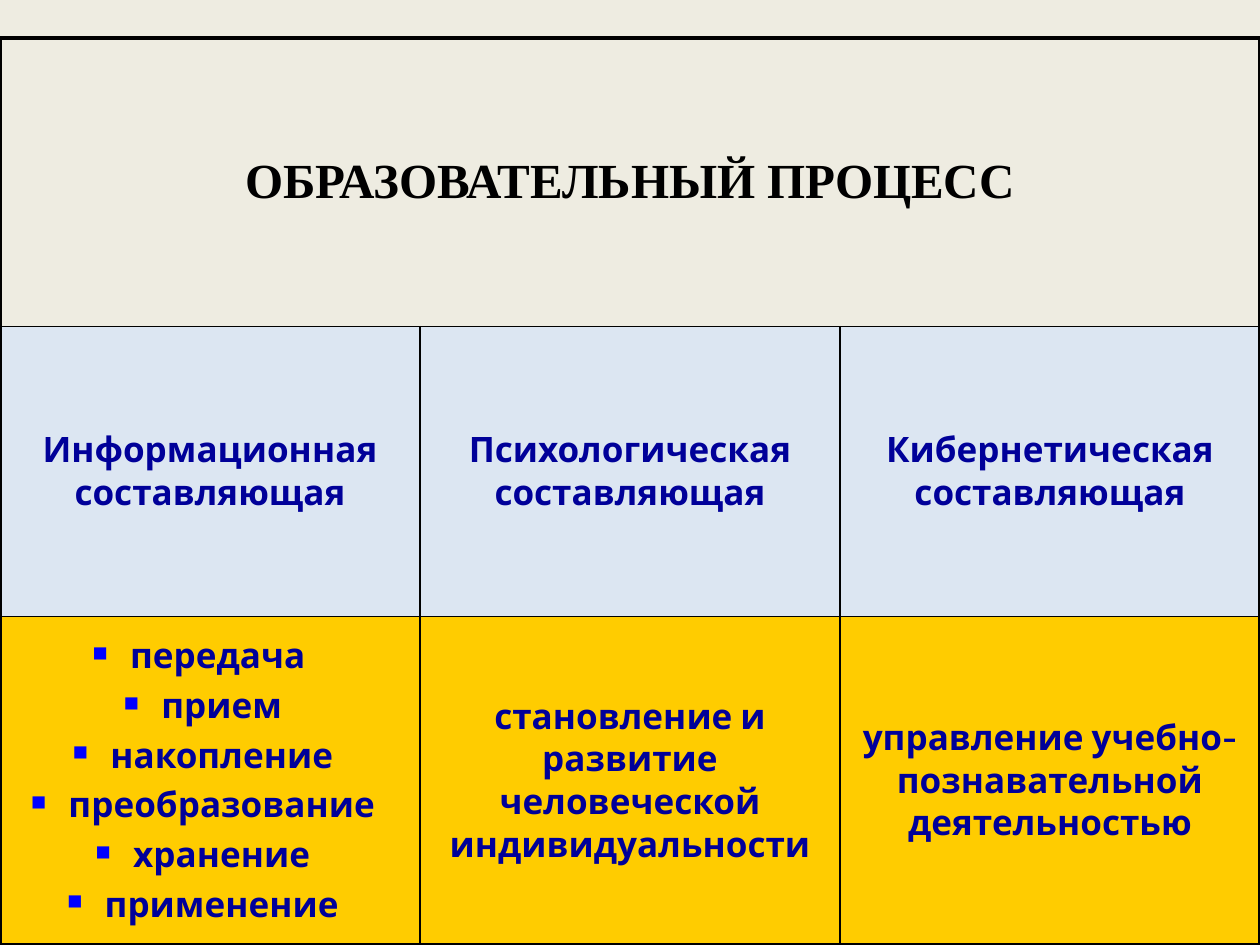
from lxml import etree
from pptx import Presentation
from pptx.dml.color import RGBColor
from pptx.enum.text import MSO_ANCHOR, PP_ALIGN
from pptx.oxml.ns import qn
from pptx.util import Pt

CENTER = PP_ALIGN.CENTER
MIDDLE = MSO_ANCHOR.MIDDLE

BLACK, NAVY, BLUE = "000000", "000099", "0000FF"
CREAM, PALE_BLUE, GOLD = "EEECE1", "DCE6F2", "FFCC00"
OUTER, INNER = 2.25, 1

HEADING = "ОБРАЗОВАТЕЛЬНЫЙ ПРОЦЕСС"
COMPONENTS = [
    "Информационная составляющая",
    "Психологическая составляющая",
    "Кибернетическая составляющая",
]
INFORMATION_TASKS = [" передача ", " прием", " накопление",
                     " преобразование", " хранение", " применение"]
CONTENTS = [
    "\n".join(INFORMATION_TASKS),
    "становление и развитие человеческой индивидуальности",
    "управление учебно-познавательной деятельностью",
]
ROW_HEIGHTS = [165, 165.6, 187.8]


def rgb(code):
    return RGBColor.from_string(code)


def add_bullet(paragraph):
    props = paragraph._p.get_or_add_pPr()
    color = etree.SubElement(props, qn("a:buClr"))
    etree.SubElement(color, qn("a:srgbClr"), val=BLUE)
    etree.SubElement(props, qn("a:buSzPct"), val="60000")
    etree.SubElement(props, qn("a:buChar"), char="■")


def set_borders(cell, **widths):
    props = cell._tc.get_or_add_tcPr()
    for side in "LRTB":
        line = etree.SubElement(props, qn(f"a:ln{side}"), w=str(int(Pt(widths[side]))))
        fill = etree.SubElement(line, qn("a:solidFill"))
        etree.SubElement(fill, qn("a:srgbClr"), val=BLACK)


def write_cell(cell, text, font, size, color, bulleted=False):
    cell.vertical_anchor = MIDDLE
    cell.text_frame.text = text
    for paragraph in cell.text_frame.paragraphs:
        paragraph.alignment = CENTER
        paragraph.space_before = Pt(0.2 * size)
        if bulleted:
            add_bullet(paragraph)
        for run in paragraph.runs:
            run.font.name = font
            run.font.size = Pt(size)
            run.font.bold = True
            run.font.color.rgb = rgb(color)


def add_process_table(slide, left, top, width, height):
    rows, columns = len(ROW_HEIGHTS), len(COMPONENTS)
    table = slide.shapes.add_table(rows, columns, Pt(left), Pt(top),
                                   Pt(width), Pt(height)).table
    table.first_row = table.horz_banding = False
    for row, row_height in zip(table.rows, ROW_HEIGHTS):
        row.height = Pt(row_height)

    # Borders: heavy outside, thin inside
    for r in range(rows):
        for c in range(columns):
            set_borders(table.cell(r, c),
                        L=OUTER if c == 0 else INNER,
                        R=OUTER if c == columns - 1 or r == 0 else INNER,
                        T=OUTER if r == 0 else INNER,
                        B=OUTER if r == rows - 1 else INNER)

    # Heading across all columns
    heading = table.cell(0, 0)
    heading.merge(table.cell(0, columns - 1))
    heading.fill.background()
    write_cell(heading, HEADING, "Times New Roman", 28, BLACK)

    # Components and their contents
    for r, (texts, fill) in enumerate([(COMPONENTS, PALE_BLUE), (CONTENTS, GOLD)], 1):
        for c, text in enumerate(texts):
            cell = table.cell(r, c)
            cell.fill.solid()
            cell.fill.fore_color.rgb = rgb(fill)
            write_cell(cell, text, "Cabin", 20, NAVY, bulleted="\n" in text)


def main():
    deck = Presentation()
    deck.slide_width, deck.slide_height = Pt(720), Pt(540)
    slide = deck.slides.add_slide(deck.slide_layouts[6])
    slide.background.fill.solid()
    slide.background.fill.fore_color.rgb = rgb(CREAM)
    add_process_table(slide, 0, 21.6, 720, sum(ROW_HEIGHTS))
    deck.save("out.pptx")


if __name__ == "__main__":
    main()
